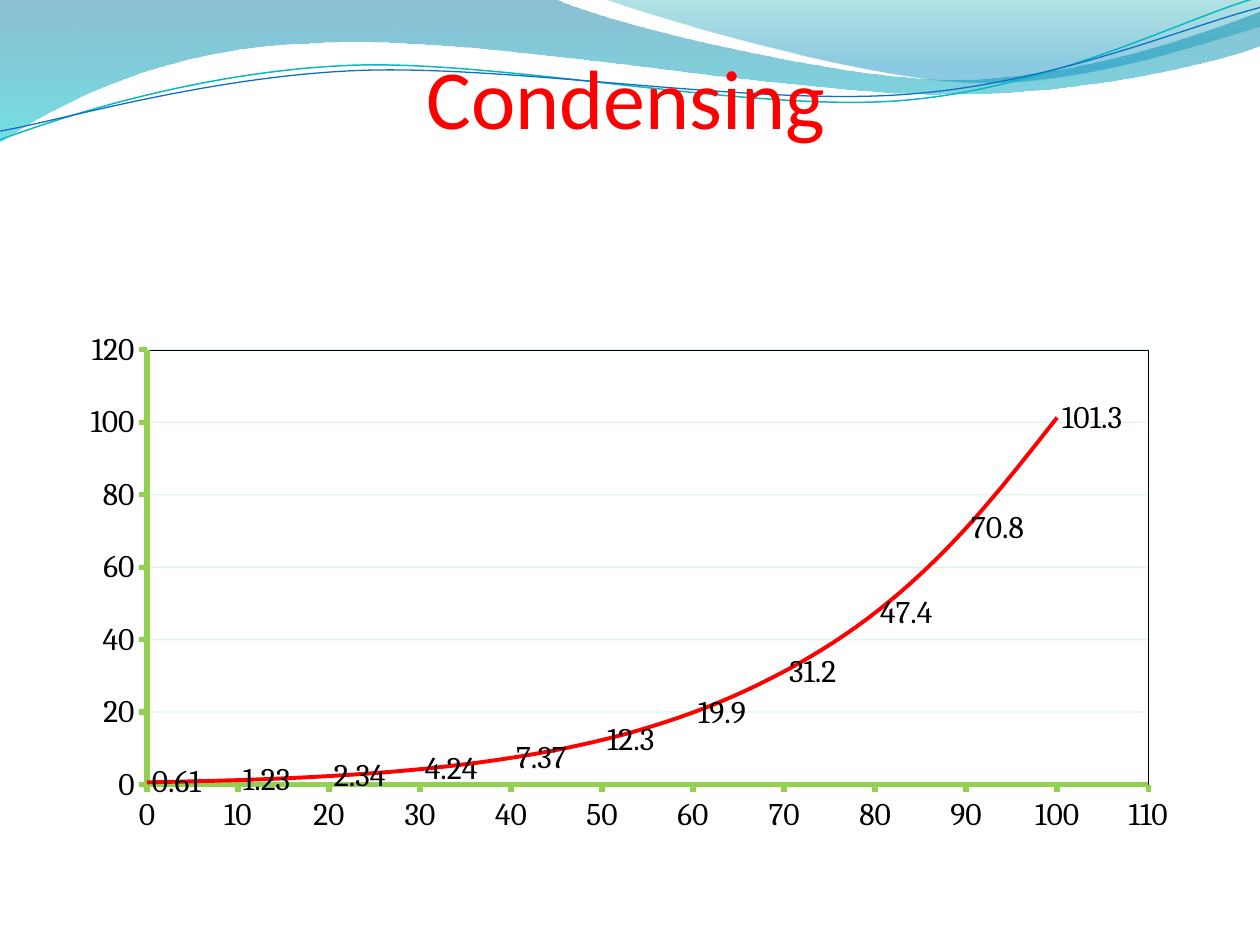
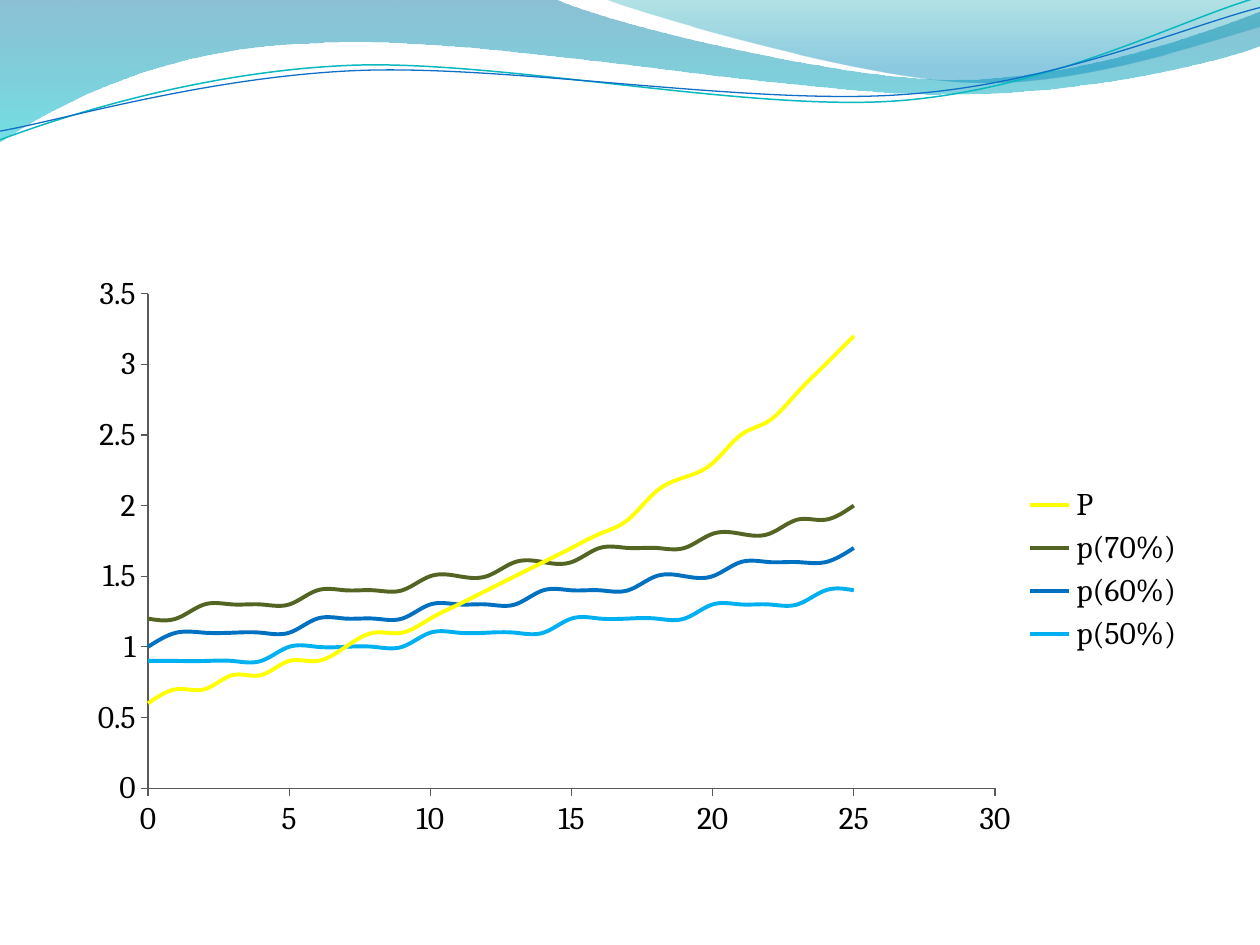
from dataclasses import dataclass

from lxml import etree
from pptx import Presentation
from pptx import util as u
from pptx.chart.data import XyChartData
from pptx.dml.color import RGBColor
from pptx.enum import chart as ch
from pptx.enum import text
from pptx.oxml import parse_xml
from pptx.oxml.ns import nsdecls, qn

Pt = u.Pt


@dataclass(frozen=True)
class Theme:
    title_font: str = "Calibri"
    chart_font: str = "Cambria"
    title_size: int = 48
    chart_size: int = 18
    curve_width: float = 2.25
    hairline: float = 0.75
    frame_width: float = 0.25
    red: str = "FF0000"
    black: str = "000000"
    axis_gray: str = "595959"
    axis_green: str = "92D050"
    grid_green: str = "00B050"
    yellow: str = "FFFF00"
    olive: str = "546422"
    blue: str = "0070C0"
    sky: str = "00B0F0"


T = Theme()
SLIDE = (0, 0, 720, 540)
TITLE_BOX = (33.8, 44.6, 648, 95.8)
CHART_BOX = (36, 152.6, 648, 345.6)

BANDS = [
    ([(0, 0), (316.8, -0.7),
      (342.7, 12.2, 478, 45.4, 545.8, 45.4),
      (614.2, 45.4, 689.8, 18.7, 720, 6.5), (720.7, 25.9),
      (707.8, 31.7, 626.4, 54.7, 537.1, 54),
      (447.8, 54, 275, 20.2, 185, 24.5),
      (92.9, 25.9, 33.1, 59.8, -0.7, 81.4)],
     [(0, "0074A1", 45), (1, "00C6CF", 55)]),
    ([(344.9, -0.7),
      (366.5, 7.9, 491, 44.6, 553.7, 46.8),
      (616.3, 49.7, 691.9, 23, 720, 15.1), (720, 0)],
     [(0, "00A1A9", 30), (0.8, "008BBF", 45)]),
]
STRANDS = [
    ([(0, 79.9),
      (34.6, 67, 113.8, 41, 199.4, 37.4),
      (284.4, 33.8, 427, 64.1, 513.4, 57.6),
      (599.8, 51.1, 675.4, 10.8, 718.6, -1.4)], "0AB8BF", 0.85),
    ([(0, 74.9),
      (33.8, 69.1, 118.1, 43.9, 203.8, 40.3),
      (290.2, 36.7, 429.8, 60.5, 516.2, 54),
      (601.9, 48.2, 677.5, 15.1, 720, 4.3)], "0F6FC6", 0.75),
]

BOILING = [0.61, 1.23, 2.34, 4.24, 7.37, 12.3, 19.9, 31.2, 47.4, 70.8, 101.3]
HUMIDITY = [
    ("P", T.yellow,
     [0.6, 0.7, 0.7, 0.8, 0.8, 0.9, 0.9, 1, 1.1, 1.1, 1.2, 1.3, 1.4,
      1.5, 1.6, 1.7, 1.8, 1.9, 2.1, 2.2, 2.3, 2.5, 2.6, 2.8, 3, 3.2]),
    ("p(70%)", T.olive,
     [1.2, 1.2, 1.3, 1.3, 1.3, 1.3, 1.4, 1.4, 1.4, 1.4, 1.5, 1.5, 1.5,
      1.6, 1.6, 1.6, 1.7, 1.7, 1.7, 1.7, 1.8, 1.8, 1.8, 1.9, 1.9, 2]),
    ("p(60%)", T.blue,
     [1, 1.1, 1.1, 1.1, 1.1, 1.1, 1.2, 1.2, 1.2, 1.2, 1.3, 1.3, 1.3,
      1.3, 1.4, 1.4, 1.4, 1.4, 1.5, 1.5, 1.5, 1.6, 1.6, 1.6, 1.6, 1.7]),
    ("p(50%)", T.sky,
     [0.9, 0.9, 0.9, 0.9, 0.9, 1, 1, 1, 1, 1, 1.1, 1.1, 1.1,
      1.1, 1.1, 1.2, 1.2, 1.2, 1.2, 1.2, 1.3, 1.3, 1.3, 1.3, 1.4, 1.4]),
]


def rgb(color):
    return RGBColor.from_string(color)


def pts(*lengths):
    return [Pt(n) for n in lengths]


def set_alpha(color_el, percent):
    etree.SubElement(color_el, qn("a:alpha")).set("val", str(percent * 1000))


def set_line(line, color, width):
    line.color.rgb = rgb(color)
    line.width = Pt(width)


def outline(s, box, segments, close):
    x, y = box[:2]
    joints = [pts(x + seg[-2], y + seg[-1]) for seg in segments]
    builder = s.shapes.build_freeform(*joints[0])
    builder.add_line_segments(joints[1:], close=close)
    sp = builder.convert_to_shape()
    sp.shadow.inherit = False
    for step, seg in zip(list(sp.element.iter(qn("a:lnTo"))), segments[1:]):
        if len(seg) == 6:
            step.tag = qn("a:cubicBezTo")
            for i in (0, 2):
                pt = etree.Element(qn("a:pt"))
                pt.set("x", str(Pt(x + seg[i]) - sp.left))
                pt.set("y", str(Pt(y + seg[i + 1]) - sp.top))
                step.insert(i // 2, pt)
    return sp


def add_waves(prs, s, box):
    shapes = []
    for segments, stops in BANDS:
        sp = outline(s, box, segments, True)
        sp.line.fill.background()
        sp.fill.gradient()
        sp.fill.gradient_angle = 270
        for stop, (position, color, _) in zip(sp.fill.gradient_stops, stops):
            stop.position = position
            stop.color.rgb = rgb(color)
        for el, (_, _, opacity) in zip(sp.element.iter(qn("a:srgbClr")), stops):
            set_alpha(el, opacity)
        shapes.append(sp)
    for segments, color, width in STRANDS:
        sp = outline(s, box, segments, False)
        sp.fill.background()
        set_line(sp.line, color, width)
        shapes.append(sp)
    for i, sp in enumerate(shapes):
        sp.element.nvSpPr.cNvPr.set("id", str(100 + i))
        prs.slide_master.shapes.element.append(sp.element)


def add_title(s, box, words):
    sp = s.shapes.title
    sp.left, sp.top, sp.width, sp.height = pts(*box)
    tf = sp.text_frame
    tf.auto_size = text.MSO_AUTO_SIZE.NONE
    tf.word_wrap = True
    tf.vertical_anchor = text.MSO_ANCHOR.BOTTOM
    tf.margin_left, tf.margin_top, tf.margin_right, tf.margin_bottom = pts(0, 3.6, 0, 57)
    p = tf.paragraphs[0]
    p.alignment = text.PP_ALIGN.CENTER
    r = p.add_run()
    r.text = words
    r.font.name = T.title_font
    r.font.size = Pt(T.title_size)
    r.font.color.rgb = rgb(T.red)


def set_axis(axis, top, step, color, width):
    axis.minimum_scale, axis.maximum_scale, axis.major_unit = 0, top, step
    axis.has_major_gridlines = False
    axis.major_tick_mark = ch.XL_TICK_MARK.OUTSIDE
    axis.minor_tick_mark = ch.XL_TICK_MARK.NONE
    set_line(axis.format.line, color, width)


def set_plot_layout(chart, layout):
    area = chart.element.find(".//" + qn("c:plotArea"))
    for old in area.findall(qn("c:layout")):
        area.remove(old)
    sizes = "".join(f'<c:{k} val="{v}"/>' for k, v in zip("xywh", layout))
    area.insert(0, parse_xml(
        f'<c:layout {nsdecls("c")}><c:manualLayout><c:layoutTarget val="inner"/>'
        f'<c:xMode val="edge"/><c:yMode val="edge"/>{sizes}</c:manualLayout></c:layout>'))
    return area


def add_curves(s, box, curves, x_step, layout, x_scale, y_scale, axis_line):
    data = XyChartData()
    for name, _, values in curves:
        series = data.add_series(name)
        for i, y in enumerate(values):
            series.add_data_point(i * x_step, y)
    chart = s.shapes.add_chart(ch.XL_CHART_TYPE.XY_SCATTER_SMOOTH_NO_MARKERS,
                               *pts(*box), data).chart
    chart.has_title = chart.has_legend = False
    chart.font.name = T.chart_font
    chart.font.size = Pt(T.chart_size)
    chart.font.color.rgb = rgb(T.black)
    plot = chart.plots[0]
    plot.vary_by_categories = False
    for series, (_, color, _) in zip(plot.series, curves):
        set_line(series.format.line, color, T.curve_width)
    for el in chart.element.iter(qn("c:smooth")):
        el.set("val", "1")
    set_axis(chart.category_axis, *x_scale, *axis_line)
    set_axis(chart.value_axis, *y_scale, *axis_line)
    return chart, set_plot_layout(chart, layout)


def show_values(area):
    flags = "".join(f'<c:show{k} val="{v}"/>' for k, v in (
        ("LegendKey", 0), ("Val", 1), ("CatName", 0),
        ("SerName", 0), ("Percent", 0), ("BubbleSize", 0)))
    area.find(".//" + qn("c:xVal")).addprevious(parse_xml(
        f'<c:dLbls {nsdecls("c")}><c:dLblPos val="r"/>{flags}</c:dLbls>'))


def boiling_chart(s, box):
    chart, area = add_curves(
        s, box, [("Series 1", T.red, BOILING)], 10,
        (0.074, 0.137, 0.883, 0.719), (110, 10), (120, 20), (T.axis_green, 3))
    area.append(parse_xml(
        f'<c:spPr {nsdecls("c", "a")}><a:noFill/><a:ln w="{Pt(T.frame_width)}"><a:solidFill>'
        f'<a:srgbClr val="{T.black}"/></a:solidFill></a:ln></c:spPr>'))
    axis = chart.value_axis
    axis.has_major_gridlines = True
    set_line(axis.major_gridlines.format.line, T.grid_green, T.hairline)
    set_alpha(area.find(".//" + qn("c:majorGridlines")).find(".//" + qn("a:srgbClr")), 13)
    show_values(area)


def humidity_chart(s, box):
    chart, _ = add_curves(s, box, HUMIDITY, 1, (0.075, 0.044, 0.747, 0.818),
                          (30, 5), (3.5, 0.5), (T.axis_gray, T.hairline))
    chart.has_legend = True
    chart.legend.position = ch.XL_LEGEND_POSITION.RIGHT
    chart.legend.include_in_layout = False


def main():
    prs = Presentation()
    prs.slide_width, prs.slide_height = pts(*SLIDE[2:])
    s = prs.slides.add_slide(prs.slide_layouts[5])
    add_waves(prs, s, SLIDE)
    add_title(s, TITLE_BOX, "Condensing")
    boiling_chart(s, CHART_BOX)
    s = prs.slides.add_slide(prs.slide_layouts[6])
    humidity_chart(s, CHART_BOX)
    prs.save("out.pptx")


if __name__ == "__main__":
    main()
